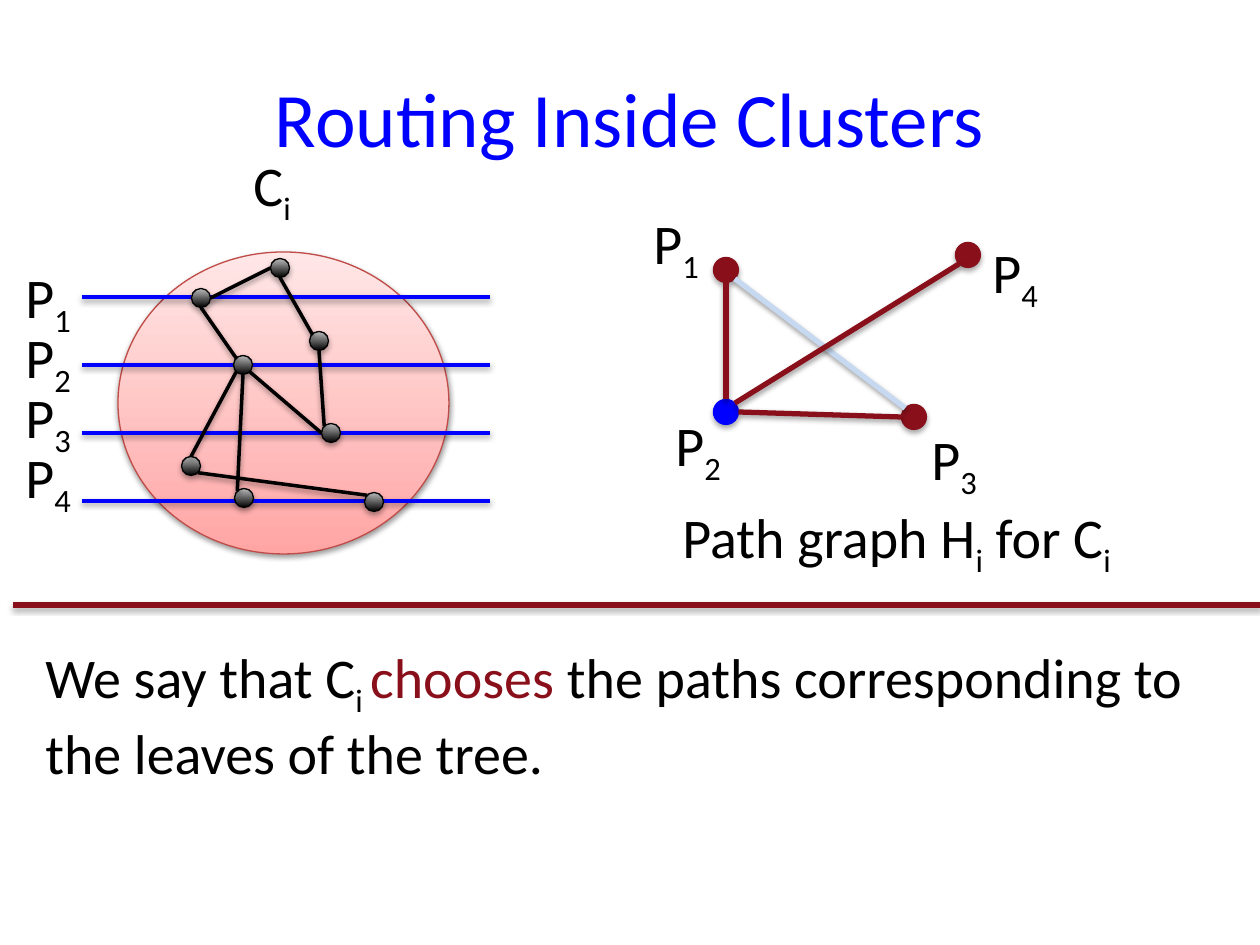
"""Build the slide on routing inside clusters: a cluster crossed by paths and its path graph."""
from math import cos, radians, sin

from lxml.etree import SubElement
from pptx import Presentation
from pptx.dml.color import RGBColor
from pptx.enum.shapes import MSO_CONNECTOR, MSO_SHAPE
from pptx.enum.text import MSO_ANCHOR, PP_ALIGN
from pptx.oxml.ns import qn
from pptx.util import Pt

PX = 914400 // 126
FONT = "Calibri"
BLACK = RGBColor(0, 0, 0)
GRAY = RGBColor(0xBD, 0xBD, 0xBD)
BLUE = RGBColor(0, 0, 0xFF)
RED = RGBColor(0x89, 0x10, 0x1B)
PALE = RGBColor(0xC6, 0xD9, 0xF1)
ROSE = RGBColor(0xFF, 0xA6, 0xA5)
BLUSH = RGBColor(0xFF, 0xE7, 0xE7)
RIM = RGBColor(0xBF, 0x4C, 0x48)

TITLE = "Routing Inside Clusters"
CAPTION = [("Path graph H", ""), ("i", "sub"), (" for C", ""), ("i", "sub")]
CLAIM = [("We say that C", ""), ("i ", "sub"), ("chooses", "red"),
         (" the paths corresponding to the leaves of the tree.", "")]

CLUSTER = (118, 252, 331, 302)
PATHS = ["1", "2", "3", "4"]
NODES = {"a": (201, 298), "b": (280, 268), "c": (243, 365), "d": (319, 341),
         "e": (331, 433), "f": (191, 466), "g": (244, 498), "h": (374, 502)}
EDGES = [("a", "E", "b", "W"), ("a", "S", "c", "NW"), ("b", "S", "d", "NW"),
         ("d", "S", "e", "NW"), ("c", "SE", "e", "W"), ("c", "S", "g", "NW"),
         ("c", "SW", "f", "N"), ("f", "SE", "h", "NW")]
GRAPH = {"1": (726, 270, RED), "2": (726, 412, BLUE),
         "3": (914, 417, RED), "4": (968, 255, RED)}
LINKS = [("1", "S", "2", "N", RED), ("1", "SE", "3", "NW", PALE),
         ("3", "W", "2", "E", RED), ("4", "SW", "2", "NE", RED)]
LABELS = [("C", "i", 241, 144), ("P", "1", 641, 202), ("P", "2", 663, 404),
          ("P", "3", 919, 418), ("P", "4", 980, 231)]
SIDES = ["E", "SE", "S", "SW", "W", "NW", "N", "NE"]


def emu(*sizes):
    return [round(size * PX) for size in sizes]


def shade(shape, alpha, dist):
    props = shape._element.spPr
    for old in props.findall(qn("a:effectLst")):
        props.remove(old)
    effects = SubElement(props, qn("a:effectLst"))
    outer = SubElement(effects, qn("a:outerShdw"), blurRad="40000", dist=str(dist),
                       dir="5400000", rotWithShape="0")
    color = SubElement(outer, qn("a:srgbClr"), val="000000")
    SubElement(color, qn("a:alpha"), val=str(alpha * 1000))


def draw_line(slide, start, end, color, width):
    line = slide.shapes.add_connector(MSO_CONNECTOR.STRAIGHT, *emu(*start, *end))
    line.line.color.rgb = color
    line.line.width = Pt(width)
    shade(line, 38, 20000)


def draw_oval(slide, box, colors, rim, alpha=35, dist=23000):
    oval = slide.shapes.add_shape(MSO_SHAPE.OVAL, *emu(*box))
    if len(colors) == 1:
        oval.fill.solid()
        oval.fill.fore_color.rgb = colors[0]
    else:
        oval.fill.gradient()
        oval.fill.gradient_angle = 90
        for stop, color in zip(oval.fill.gradient_stops, colors):
            stop.color.rgb = color
    oval.line.color.rgb = rim
    oval.line.width = Pt(0.75)
    shade(oval, alpha, dist)


def draw_dot(slide, x, y, size, colors, rim):
    draw_oval(slide, (x - size / 2, y - size / 2, size, size), colors, rim)


def touch(spot, side, size):
    turn = radians(45 * SIDES.index(side))
    return spot[0] + size / 2 * cos(turn), spot[1] + size / 2 * sin(turn)


def write(slide, parts, box):
    frame = slide.shapes.add_textbox(*emu(*box)).text_frame
    frame.word_wrap = True
    for text, style in parts:
        run = frame.paragraphs[0].add_run()
        run.text = text
        run.font.name = FONT
        run.font.size = Pt(32)
        run.font.color.rgb = RED if style == "red" else BLACK
        if style == "sub":
            run.font._element.set("baseline", "-25000")


def add_title(slide):
    title = slide.shapes.title
    title.left, title.top, title.width, title.height = emu(63, 38, 1134, 158)
    frame = title.text_frame
    frame.text = TITLE
    frame.vertical_anchor = MSO_ANCHOR.MIDDLE
    frame.paragraphs[0].alignment = PP_ALIGN.CENTER
    font = frame.paragraphs[0].runs[0].font
    font.name, font.size = FONT, Pt(44)
    font.color.rgb = BLUE


def add_cluster(slide, dot=19):
    draw_oval(slide, CLUSTER, (ROSE, BLUSH), RIM, 38, 20000)
    for row, name in enumerate(PATHS):
        y = 297 + 68 * row
        draw_line(slide, (82, y), (490, y), BLUE, 2)
        write(slide, [("P", ""), (name, "sub")], (13, 256 + 60 * row, 79, 81))
    for x, y in NODES.values():
        draw_dot(slide, x, y, dot, (BLACK, GRAY), BLACK)
    for head, out, tail, into in EDGES:
        draw_line(slide, touch(NODES[head], out, dot), touch(NODES[tail], into, dot), BLACK, 2)


def add_graph(slide, dot=25):
    for x, y, color in GRAPH.values():
        draw_dot(slide, x, y, dot, (color,), color)
    for head, out, tail, into, color in LINKS:
        draw_line(slide, touch(GRAPH[head], out, dot), touch(GRAPH[tail], into, dot), color, 3)


def main():
    deck = Presentation()
    deck.slide_width, deck.slide_height = emu(1260, 945)
    slide = deck.slides.add_slide(deck.slide_layouts[5])
    add_title(slide)
    add_cluster(slide)
    add_graph(slide)
    for base, mark, x, y in LABELS:
        write(slide, [(base, ""), (mark, "sub")], (x, y, 79, 81))
    write(slide, CAPTION, (670, 496, 527, 81))
    draw_line(slide, (13, 605), (1260, 605), RED, 3)
    write(slide, CLAIM, (33, 636, 1164, 149))
    deck.save("out.pptx")


if __name__ == "__main__":
    main()
